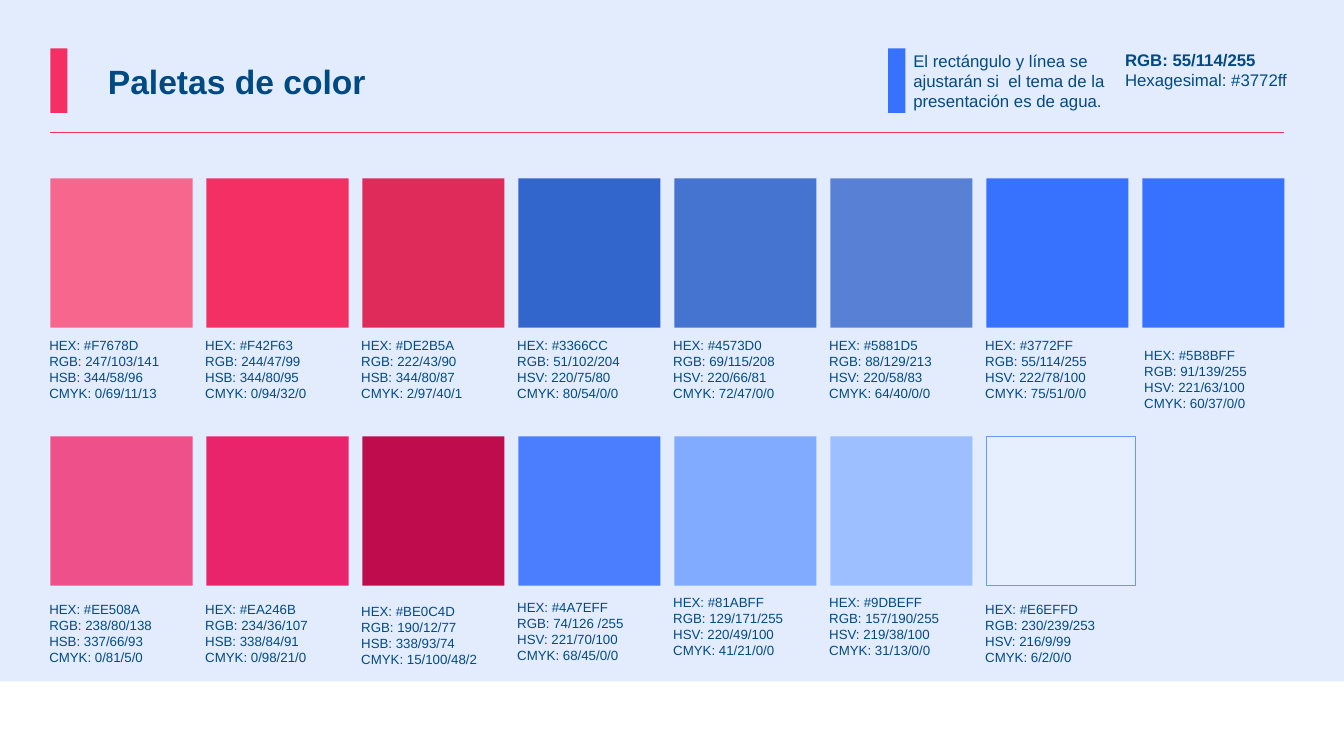
from dataclasses import dataclass

from lxml.etree import SubElement
from pptx import Presentation
from pptx.dml.color import RGBColor
from pptx.enum.shapes import MSO_CONNECTOR, MSO_SHAPE
from pptx.enum.text import MSO_ANCHOR, MSO_AUTO_SIZE, PP_ALIGN
from pptx.oxml.ns import qn
from pptx.util import Inches, Pt


@dataclass(frozen=True)
class Theme:
    font: str = "Arial"
    field: str = "E2ECFD"
    footer: str = "FFFFFF"
    accent: str = "F42F63"
    water: str = "3772FF"
    title: str = "004A84"
    text: str = "034A83"
    outline: str = "6699FF"
    title_size: float = 24
    note_size: float = 12
    label_size: float = 9.5
    hairline: float = 0.5


THEME = Theme()
WIDTH, HEIGHT = 13.33, 7.5
LEFT, RIGHT = 0.5, 12.74
COLUMNS = 8
SWATCH_WIDTH, SWATCH_HEIGHT = 1.41, 1.48
COLUMN_STEP = (RIGHT - LEFT - SWATCH_WIDTH) / (COLUMNS - 1)
ROW_TOPS = (1.77, 4.33)
RED_COLUMNS = 3
LABEL_INSET = 0.11
LABEL_WIDTH, LABEL_HEIGHT = 1.52, 0.74
FOOTER_TOP = 6.76
MARKER_TOP, MARKER_WIDTH, MARKER_HEIGHT = 0.48, 0.17, 0.64

# hex, RGB, HSB or HSV, CMYK, top of the label
PALETTE_ROWS = (
    (
        ("F7678D", "247/103/141", "344/58/96", "0/69/11/13", 3.3),
        ("F42F63", "244/47/99", "344/80/95", "0/94/32/0", 3.3),
        ("DE2B5A", "222/43/90", "344/80/87", "2/97/40/1", 3.3),
        ("3366CC", "51/102/204", "220/75/80", "80/54/0/0", 3.3),
        ("4573D0", "69/115/208", "220/66/81", "72/47/0/0", 3.3),
        ("5881D5", "88/129/213", "220/58/83", "64/40/0/0", 3.3),
        ("3772FF", "55/114/255", "222/78/100", "75/51/0/0", 3.3),
        ("5B8BFF", "91/139/255", "221/63/100", "60/37/0/0", 3.4),
    ),
    (
        ("EE508A", "238/80/138", "337/66/93", "0/81/5/0", 5.92),
        ("EA246B", "234/36/107", "338/84/91", "0/98/21/0", 5.92),
        ("BE0C4D", "190/12/77", "338/93/74", "15/100/48/2", 5.94),
        ("4A7EFF", "74/126 /255", "221/70/100", "68/45/0/0", 5.9),
        ("81ABFF", "129/171/255", "220/49/100", "41/21/0/0", 5.85),
        ("9DBEFF", "157/190/255", "219/38/100", "31/13/0/0", 5.85),
        ("E6EFFD", "230/239/253", "216/9/99", "6/2/0/0", 5.92),
    ),
)
# Exceptions to the rule that a swatch shows its own hex in the standard size
SWATCH_FILLS = {"5B8BFF": THEME.water}
OUTLINED = {"E6EFFD": 1.48}
LABEL_SHIFTS = {"5B8BFF": 0.03}


def apply_format(target, values):
    for attribute, value in values.items():
        setattr(target, attribute, value)


def style_paragraph(paragraph, size, color, bold=False):
    paragraph.alignment = PP_ALIGN.LEFT
    apply_format(paragraph.font, {"name": THEME.font, "size": Pt(size), "bold": bold})
    paragraph.font.color.rgb = RGBColor.from_string(color)


def add_block(slide, left, top, width, height, fill, outline=None):
    block = slide.shapes.add_shape(
        MSO_SHAPE.RECTANGLE, *map(Inches, (left, top, width, height)))
    block.shadow.inherit = False
    block.fill.solid()
    block.fill.fore_color.rgb = RGBColor.from_string(fill)
    if outline:
        block.line.color.rgb = RGBColor.from_string(outline)
        block.line.width = Pt(THEME.hairline)
    else:
        block.line.fill.background()


def add_lines(slide, left, top, width, height, lines, size, bold_first=False):
    """Add a text box with one paragraph for each line."""
    frame = slide.shapes.add_textbox(*map(Inches, (left, top, width, height))).text_frame
    apply_format(frame, {"word_wrap": True, "auto_size": MSO_AUTO_SIZE.SHAPE_TO_FIT_TEXT})
    frame.text = "\n".join(lines)
    for index, paragraph in enumerate(frame.paragraphs):
        style_paragraph(paragraph, size, THEME.text, bold_first and index == 0)


def add_title(slide, text):
    title = slide.shapes.title
    apply_format(title, {"left": Inches(0.97), "top": Inches(0.55),
                         "width": Inches(6.88), "height": Inches(0.5)})
    frame = title.text_frame
    frame.text = text
    apply_format(frame, {"word_wrap": True, "vertical_anchor": MSO_ANCHOR.MIDDLE,
                         "auto_size": MSO_AUTO_SIZE.NONE})
    style_paragraph(frame.paragraphs[0], THEME.title_size, THEME.title, True)


def add_rule(slide, top):
    rule = slide.shapes.add_connector(
        MSO_CONNECTOR.STRAIGHT, *map(Inches, (LEFT, top, RIGHT, top)))
    rule.line.color.rgb = RGBColor.from_string(THEME.accent)
    rule.line.width = Pt(THEME.hairline)
    SubElement(rule._element.spPr, qn("a:effectLst"))


def add_header(slide):
    add_title(slide, "Paletas de color")
    for marker_left, color in ((LEFT, THEME.accent), (8.81, THEME.water)):
        add_block(slide, marker_left, MARKER_TOP, MARKER_WIDTH, MARKER_HEIGHT, color)
    add_rule(slide, 1.31)
    add_lines(slide, 8.96, 0.45, 2.1, 0.71,
              ["El rectángulo y línea se ajustarán si  el tema de la presentación es de agua."],
              THEME.note_size)
    add_lines(slide, 11.06, 0.44, 1.93, 0.5,
              ["RGB: 55/114/255", "Hexagesimal: #3772ff"], THEME.note_size, bold_first=True)


def add_swatch(slide, column, top, color):
    """Add one colour square with its codes beneath."""
    code, rgb, hue, cmyk, label_top = color
    left = LEFT + column * COLUMN_STEP
    add_block(slide, left, top, OUTLINED.get(code, SWATCH_WIDTH), SWATCH_HEIGHT,
              SWATCH_FILLS.get(code, code), THEME.outline if code in OUTLINED else None)
    hue_model = "HSB" if column < RED_COLUMNS else "HSV"
    codes = [f"HEX: #{code}", f"RGB: {rgb}", f"{hue_model}: {hue}", f"CMYK: {cmyk}"]
    add_lines(slide, left - LABEL_INSET + LABEL_SHIFTS.get(code, 0), label_top,
              LABEL_WIDTH, LABEL_HEIGHT, codes, THEME.label_size)


def main():
    deck = Presentation()
    apply_format(deck, {"slide_width": Inches(WIDTH), "slide_height": Inches(HEIGHT)})
    slide = deck.slides.add_slide(deck.slide_layouts[5])
    slide.background.fill.solid()
    slide.background.fill.fore_color.rgb = RGBColor.from_string(THEME.field)
    add_block(slide, 0, FOOTER_TOP, WIDTH, HEIGHT - FOOTER_TOP, THEME.footer)
    add_header(slide)
    for top, palette in zip(ROW_TOPS, PALETTE_ROWS):
        for column, color in enumerate(palette):
            add_swatch(slide, column, top, color)
    deck.save("out.pptx")


if __name__ == "__main__":
    main()
